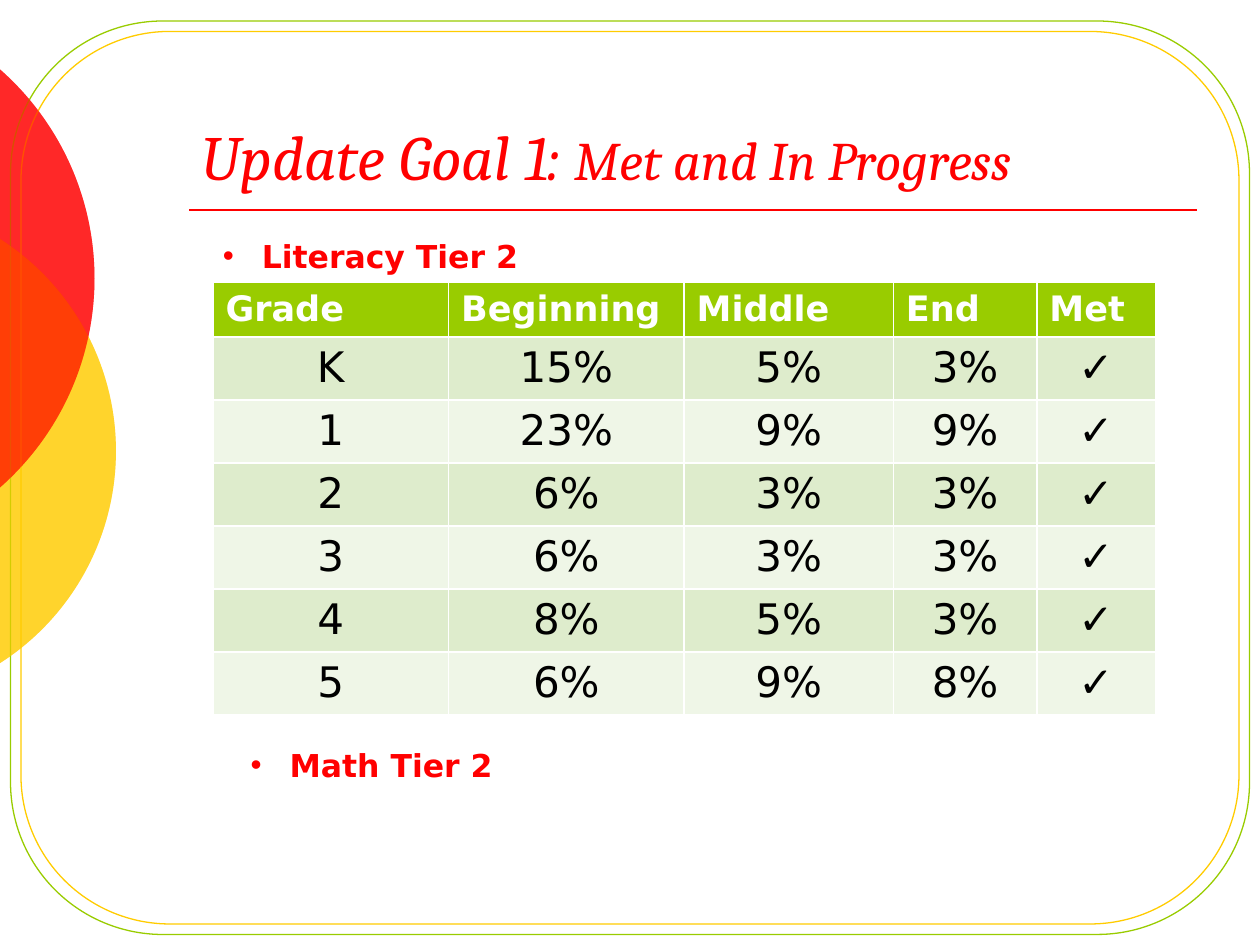
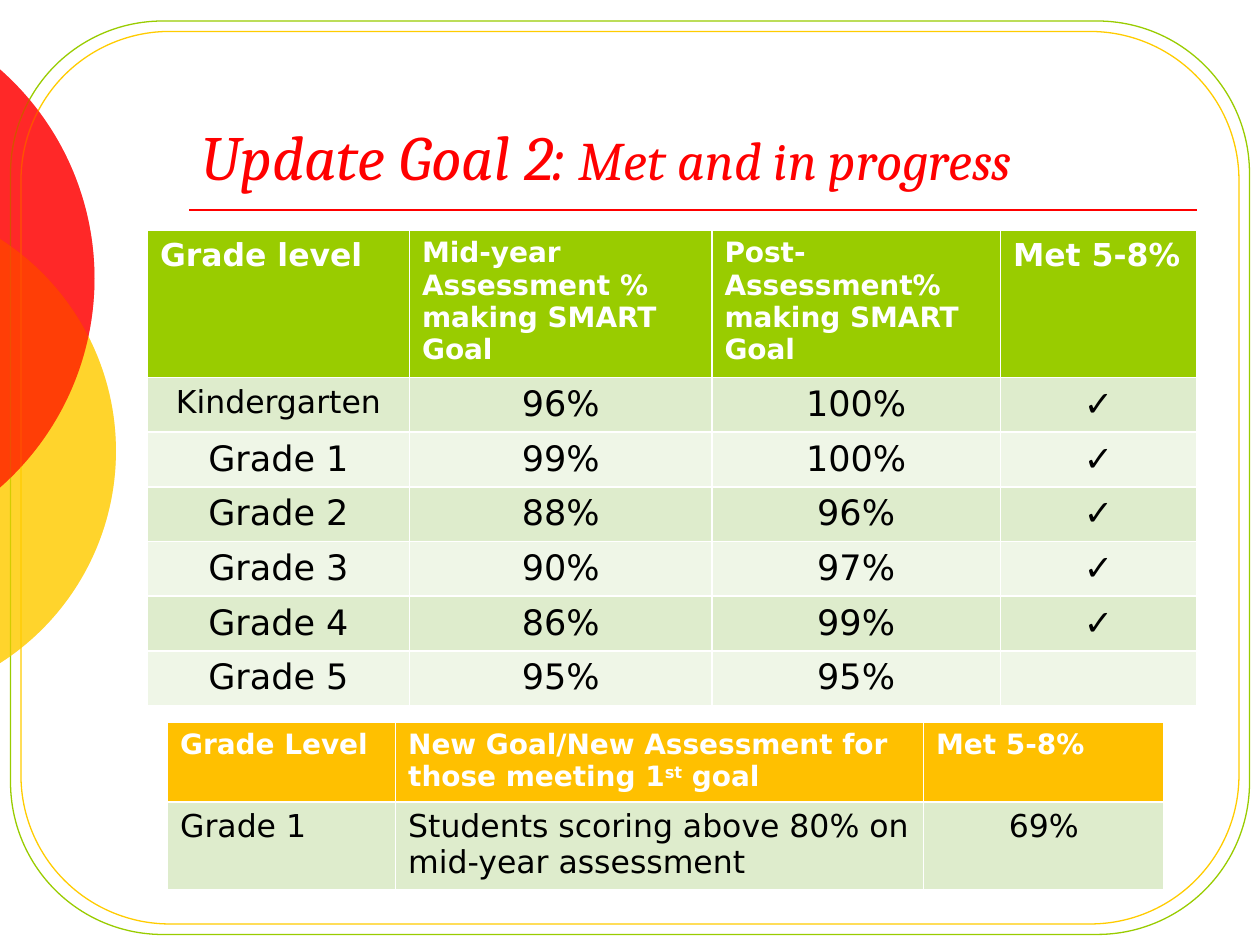
from lxml import etree
from pptx import Presentation
from pptx.dml.color import RGBColor
from pptx.enum.shapes import MSO_CONNECTOR, MSO_SHAPE
from pptx.enum.text import MSO_ANCHOR, PP_ALIGN
from pptx.oxml.ns import qn
from pptx.util import Inches, Pt

RED = RGBColor(0xFF, 0x00, 0x00)
YELLOW = RGBColor(0xFF, 0xCC, 0x00)
GREEN = RGBColor(0x99, 0xCC, 0x00)
AMBER = RGBColor(0xFF, 0xC0, 0x00)
WHITE = RGBColor(0xFF, 0xFF, 0xFF)
BLACK = RGBColor(0x00, 0x00, 0x00)
BANDS = RGBColor(0xDE, 0xEC, 0xCC), RGBColor(0xEF, 0xF6, 0xE7)

SERIF = "Cambria"
SANS = "DejaVu Sans"
STRAIGHT = MSO_CONNECTOR.STRAIGHT
ROUNDED = MSO_SHAPE.ROUNDED_RECTANGLE
OVAL = MSO_SHAPE.OVAL
CENTER = PP_ALIGN.CENTER
LEFT = PP_ALIGN.LEFT
BOTTOM = MSO_ANCHOR.BOTTOM
TICK = "✓"


def box(at):
    return [Inches(n) for n in at]


def style(para, size, color, face=SANS, bold=False, italic=False):
    font = para.font
    font.name, font.size = face, Pt(size)
    font.bold, font.italic = bold, italic
    font.color.rgb = color


def add_disc(slide, left, top, width, color, alpha):
    """Draw a translucent disc that the slide's left edge cuts."""
    disc = slide.shapes.add_shape(OVAL, *box((left, top, width, width)))
    disc.shadow.inherit = False
    disc.line.fill.background()
    disc.fill.solid()
    disc.fill.fore_color.rgb = color
    tint = disc.fill._xPr.find(qn("a:solidFill"))[0]
    etree.SubElement(tint, qn("a:alpha")).set("val", str(alpha * 1000))


def add_discs(slide):
    add_disc(slide, -3.08, 1.58, 4, YELLOW, 58)
    add_disc(slide, -3.67, 0, 4.42, RED, 60)


def add_frame(slide, at, color):
    frame = slide.shapes.add_shape(ROUNDED, *box(at))
    frame.adjustments[0] = 1 / 6
    frame.shadow.inherit = False
    frame.fill.background()
    frame.line.color.rgb = color
    frame.line.width = Pt(0.75)


def add_rule(slide):
    rule = slide.shapes.add_connector(STRAIGHT, *box((1.5, 5 / 3, 9.5, 5 / 3)))
    rule.line.color.rgb = RED
    rule.line.width = Pt(1)
    etree.SubElement(rule._element.spPr, qn("a:effectLst"))


def add_text(slide, at):
    frame = slide.shapes.add_textbox(*box(at)).text_frame
    frame.word_wrap = True
    return frame


def add_title(slide, goal, state):
    frame = add_text(slide, (1.5, 0.33, 8, 1.25))
    frame.vertical_anchor = BOTTOM
    para = frame.paragraphs[0]
    style(para, 36, RED, SERIF, italic=True)
    para.add_run().text = goal
    run = para.add_run()
    run.text = state
    run.font.size = Pt(31)


def add_bullet(slide, at, text):
    para = add_text(slide, at).paragraphs[0]
    para.text = text
    props = para._p.get_or_add_pPr()
    props.set("marL", str(Inches(0.31)))
    props.set("indent", str(-Inches(0.31)))
    etree.SubElement(props, qn("a:buFont")).set("typeface", "Arial")
    etree.SubElement(props, qn("a:buChar")).set("char", "•")
    style(para, 18, RED, bold=True)


def add_grid(slide, spot, cols, tall, rows, head, sizes, aligns):
    """Add a table; tall and sizes each hold a header and a body value."""
    at = (*spot, sum(cols), tall[0] + tall[1] * (len(rows) - 1))
    grid = slide.shapes.add_table(len(rows), len(cols), *box(at)).table
    for col, width in zip(grid.columns, cols):
        col.width = Inches(width)
    for r, texts in enumerate(rows):
        grid.rows[r].height = Inches(tall[r > 0])
        for c, text in enumerate(texts):
            cell = grid.cell(r, c)
            cell.fill.solid()
            cell.fill.fore_color.rgb = BANDS[(r - 1) % 2] if r else head
            cell.text = text
            para = cell.text_frame.paragraphs[0]
            para.alignment = aligns[c] if r else LEFT
            style(para, sizes[r > 0], BLACK if r else WHITE, bold=not r)
    return grid


def add_slide(deck, goal, state):
    slide = deck.slides.add_slide(deck.slide_layouts[6])
    add_discs(slide)
    add_frame(slide, (1 / 12, 1 / 6, 9 + 5 / 6, 7.25), GREEN)
    add_frame(slide, (1 / 6, 0.25, 9 + 2 / 3, 7 + 1 / 12), YELLOW)
    add_rule(slide)
    add_discs(slide)
    add_title(slide, goal, state)
    return slide


def add_tiers(deck):
    slide = add_slide(deck, "Update Goal 1: ", "Met and In Progress")
    rows = [
        ("Grade", "Beginning", "Middle", "End", "Met"),
        ("K", "15%", "5%", "3%", TICK),
        ("1", "23%", "9%", "9%", TICK),
        ("2", "6%", "3%", "3%", TICK),
        ("3", "6%", "3%", "3%", TICK),
        ("4", "8%", "5%", "3%", TICK),
        ("5", "6%", "9%", "8%", TICK),
    ]
    add_grid(slide, (1.69, 2.24), (1.87, 1.87, 1.66, 1.14, 0.94),
             (0.41, 0.48), rows, GREEN, (20, 24), [CENTER] * 5)
    add_bullet(slide, (1.67, 1.83, 6.67, 0.4), "Literacy Tier 2")
    add_bullet(slide, (1.89, 5.87, 6.92, 0.4), "Math Tier 2")


def add_scores(deck):
    slide = add_slide(deck, "Update Goal 2: ", "Met and in progress")
    rows = [
        ("Grade level", "Mid-year Assessment % making SMART Goal",
         "Post- Assessment% making SMART Goal", "Met 5-8%"),
        ("Kindergarten", "96%", "100%", TICK),
        ("Grade 1", "99%", "100%", TICK),
        ("Grade 2", "88%", "96%", TICK),
        ("Grade 3", "90%", "97%", TICK),
        ("Grade 4", "86%", "99%", TICK),
        ("Grade 5", "95%", "95%", ""),
    ]
    grid = add_grid(slide, (1.17, 1.83), (2.08, 2.4, 2.29, 1.56),
                    (1.11, 0.42), rows, GREEN, (16, 20), [CENTER] * 4)
    for r, c in ((0, 0), (0, 3), (1, 0)):
        grid.cell(r, c).text_frame.paragraphs[0].font.size = Pt(18)

    rows = [
        ("Grade Level", "New Goal/New Assessment for those meeting 1",
         "Met 5-8%"),
        ("Grade 1", "Students scoring above 80% on mid-year assessment",
         "69%"),
    ]
    grid = add_grid(slide, (1.33, 5.73), (1.81, 4.19, 1.91), (0.6, 0.67),
                    rows, AMBER, (16, 18), (LEFT, LEFT, CENTER))
    para = grid.cell(0, 1).text_frame.paragraphs[0]
    raised = para.add_run()
    raised.text = "st"
    raised._r.get_or_add_rPr().set("baseline", "30000")
    para.add_run().text = " goal"


def main():
    deck = Presentation()
    deck.slide_width, deck.slide_height = Inches(10), Inches(7.5)
    add_tiers(deck)
    add_scores(deck)
    deck.save("out.pptx")


if __name__ == "__main__":
    main()
